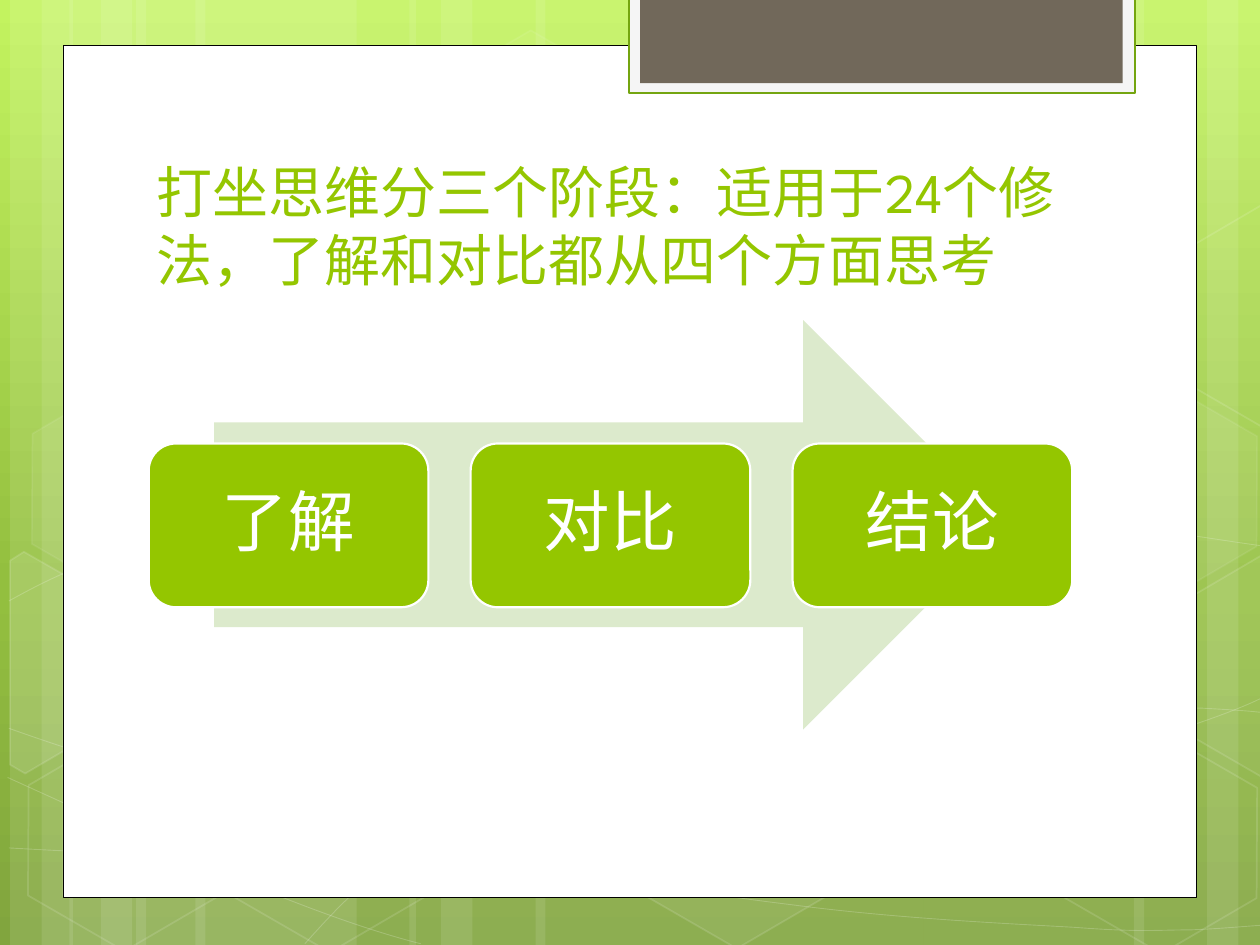
import copy
from dataclasses import dataclass
from typing import Optional

import pptx
import pptx.dml.color
import pptx.enum.shapes
import pptx.enum.text
import pptx.oxml
import pptx.oxml.ns
import pptx.util

Inches, Pt = pptx.util.Inches, pptx.util.Pt
MSO = pptx.enum.shapes.MSO_SHAPE
ANCHOR, ALIGN = pptx.enum.text.MSO_ANCHOR, pptx.enum.text.PP_ALIGN
qn = pptx.oxml.ns.qn
FONT = "League Spartan"
GREEN, WHITE = "94C600", "FFFFFF"


@dataclass
class Style:
    fill: Optional[str] = None
    fill_alpha: int = 100
    line: Optional[str] = None
    width: float = 1
    line_alpha: int = 100


@dataclass
class Hexagon:
    left: float
    top: float
    fill_alpha: int
    line_alpha: int


@dataclass
class Outline:
    points: list
    fill_alpha: int


STRIPES = [(1.08, 1.75), (0.08, 0.5), (0.33, 0.83), (1.55, 1.75), (0.55, 0.5), (0.8, 0.83),
           (7.33, 1.75), (9.58, 0.5), (9, 0.83), (4.25, 3.08), (3.25, 0.5), (3.5, 0.83)]
CURVES = [
    [(0.07, 6.73), (0.61, 6.76), (1.15, 6.79), (1.9, 6.78), (2.65, 6.77), (3.58, 6.75), (4.58, 6.65),
     (5.58, 6.55), (7, 6.36), (7.92, 6.17), (8.83, 5.98), (9.77, 5.68), (10.07, 5.51)],
    [(0.07, 4.77), (0.36, 4.61), (0.65, 4.46), (1.21, 4.31), (1.78, 4.16), (2.59, 3.94), (3.47, 3.87),
     (4.36, 3.8), (5.44, 3.79), (6.54, 3.87), (7.64, 3.95), (9.47, 4.26), (10.07, 4.34)],
    [(0.06, 6.17), (1.27, 6.72), (2.47, 7.27), (3.34, 7.49)],
    [(0.07, 5.78), (0.38, 5.89), (0.7, 6), (1.28, 6.16), (1.86, 6.31), (2.73, 6.56), (3.57, 6.73),
     (4.4, 6.9), (5.45, 7.08), (6.28, 7.18), (7.11, 7.29), (8, 7.33), (8.53, 7.36),
     (9.05, 7.4), (9.19, 7.38), (9.45, 7.38), (9.71, 7.37), (9.89, 7.35), (10.07, 7.34)],
    [(2.42, 7.49), (2.6, 7.29), (2.78, 7.09), (3.02, 6.91), (3.26, 6.73), (3.6, 6.53), (3.88, 6.39),
     (4.16, 6.25), (4.33, 6.19), (4.7, 6.09), (5.06, 5.99), (5.73, 5.85), (6.08, 5.78),
     (6.44, 5.71), (6.49, 5.71), (6.8, 5.69), (7.11, 5.66), (7.6, 5.63), (7.94, 5.62),
     (8.29, 5.61), (8.86, 5.62), (8.86, 5.62), (9.08, 5.62), (9.31, 5.62), (9.53, 5.62),
     (9.71, 5.63), (9.88, 5.64), (9.97, 5.65), (10.06, 5.66), (10.03, 5.65), (10.06, 5.66)],
]
HEXAGONS = [
    Hexagon(3.34, 0.36, 4, 8), Hexagon(4.97, 5.89, 6, 12), Hexagon(0.11, 5.91, 0, 12),
    Hexagon(0.14, 3.12, 7, 8), Hexagon(1.74, 5.92, 0, 12), Hexagon(7.53, 4.53, 10, 12),
    Hexagon(8.34, 5.93, 0, 12), Hexagon(8.34, 3.14, 7, 8),
]
CUT_HEXAGONS = [
    Outline([(0.08, 4.45), (0.19, 4.38), (0.96, 4.82), (0.95, 5.7), (0.2, 6.14), (0.08, 6.07)], 10),
    Outline([(9.26, 4.85), (10.01, 4.41), (10.09, 4.46), (10.09, 6.13), (10.02, 6.17), (9.26, 5.73)], 4),
    Outline([(9.26, 2.07), (10.01, 1.63), (10.1, 1.68), (10.09, 3.35), (10.02, 3.39), (9.26, 2.95)], 0),
]
STAGES = ["了解", "对比", "结论"]
FIRST_STAGE, LAST_STAGE = 1.18, 6.29


def rgb(color: str):
    return pptx.dml.color.RGBColor.from_string(color)


def paint(fill, color: str, alpha: int) -> None:
    fill.solid()
    fill.fore_color.rgb = rgb(color)
    if alpha < 100:
        node = fill._xPr.find(qn("a:solidFill"))[0]
        node.append(pptx.oxml.parse_xml(
            f'<a:alpha {pptx.oxml.ns.nsdecls("a")} val="{alpha * 1000}"/>'))


def apply_style(sp, style: Style) -> None:
    sp.shadow.inherit = False
    if style.fill and style.fill_alpha:
        paint(sp.fill, style.fill, style.fill_alpha)
    else:
        sp.fill.background()
    if style.line:
        sp.line.width = Pt(style.width)
        paint(sp.line.fill, style.line, style.line_alpha)
    else:
        sp.line.fill.background()


def add_shape(s, kind, left: float, top: float, width: float, height: float, style: Style):
    sp = s.shapes.add_shape(kind, Inches(left), Inches(top), Inches(width), Inches(height))
    apply_style(sp, style)
    return sp


def add_free(s, points: list, closed: bool, style: Style):
    emu = [(Inches(x), Inches(y)) for x, y in points]
    fb = s.shapes.build_freeform(*emu[0])
    fb.add_line_segments(emu[1:], close=closed)
    sp = fb.convert_to_shape()
    apply_style(sp, style)
    return sp


def add_curve(s, points: list, style: Style) -> None:
    sp = add_free(s, points, False, style)
    lines = list(sp._element.iter(qn("a:lnTo")))
    outline = lines[0].getparent()
    for i in range(0, len(lines), 3):
        cubic = pptx.oxml.parse_xml(f'<a:cubicBezTo {pptx.oxml.ns.nsdecls("a")}/>')
        for line in lines[i:i + 3]:
            cubic.append(line[0])
            outline.remove(line)
        outline.append(cubic)


def write(tf, text: str, size: float, color: str, align) -> None:
    tf.word_wrap = True
    tf.text = text
    p = tf.paragraphs[0]
    p.alignment = align
    p.font.name, p.font.size, p.font.color.rgb = FONT, Pt(size), rgb(color)


def add_background(s) -> None:
    fill = s.background.fill
    fill.gradient()
    fill.gradient_angle = 270
    stops = s._element.find(".//" + qn("a:gsLst"))
    stops.insert(1, copy.deepcopy(stops[0]))
    for stop, (position, color) in zip(fill.gradient_stops,
                                       [(0, "C3F35F"), (0.62, "93BF3F"), (1, "81A53E")]):
        stop.position, stop.color.rgb = position, rgb(color)


def add_decoration(s) -> None:
    for left, width in STRIPES:
        add_shape(s, MSO.RECTANGLE, left, 0, width, 7.5, Style(WHITE, 10))
    for curve in CURVES:
        add_curve(s, curve, Style(line=WHITE, width=0.5, line_alpha=20))
    for h in HEXAGONS:
        sp = add_shape(s, MSO.HEXAGON, h.left, h.top, 1.75, 1.52,
                       Style(WHITE, h.fill_alpha, WHITE, 1, h.line_alpha))
        sp.rotation = 30
        sp.adjustments[0] = 0.285
    for cut in CUT_HEXAGONS:
        add_free(s, cut.points, True, Style(WHITE, cut.fill_alpha, WHITE, 1, 12))
    add_shape(s, MSO.RECTANGLE, 0.5, 0.36, 9, 6.76, Style(WHITE, line="000000", width=0.5))
    add_shape(s, MSO.RECTANGLE, 4.99, -0.02, 4.02, 0.76, Style("F5F5F5", line="74A510", width=1.25))
    add_shape(s, MSO.RECTANGLE, 5.08, -0.02, 3.83, 0.68, Style("71685A"))


def add_title(s) -> None:
    sp = s.shapes.title
    sp.left, sp.top, sp.width, sp.height = Inches(1.14), Inches(1.12), Inches(7.68), Inches(1.25)
    write(sp.text_frame, "打坐思维分三个阶段：适用于24个修法，了解和对比都从四个方面思考",
          32, GREEN, ALIGN.LEFT)
    sp.text_frame.vertical_anchor = ANCHOR.BOTTOM
    sp.text_frame.auto_size = pptx.enum.text.MSO_AUTO_SIZE.NONE
    s.shapes._spTree.append(sp._element)


def add_stages(s) -> None:
    add_shape(s, MSO.RIGHT_ARROW, 1.7, 2.54, 6.3, 3.25, Style("DCEACC"))
    pitch = (LAST_STAGE - FIRST_STAGE) / (len(STAGES) - 1)
    for i, stage in enumerate(STAGES):
        sp = add_shape(s, MSO.ROUNDED_RECTANGLE, FIRST_STAGE + pitch * i, 3.52, 2.22, 1.3,
                       Style(GREEN, line=WHITE, width=1.25))
        write(sp.text_frame, stage, 38, WHITE, ALIGN.CENTER)
        sp.text_frame.vertical_anchor = ANCHOR.MIDDLE
        sp.text_frame.paragraphs[0].line_spacing = 0.9


def main() -> None:
    prs = pptx.Presentation()
    prs.slide_width, prs.slide_height = Inches(10), Inches(7.5)
    s = prs.slides.add_slide(prs.slide_layouts[5])
    add_background(s)
    add_decoration(s)
    add_title(s)
    add_stages(s)
    prs.save("out.pptx")


if __name__ == "__main__":
    main()
